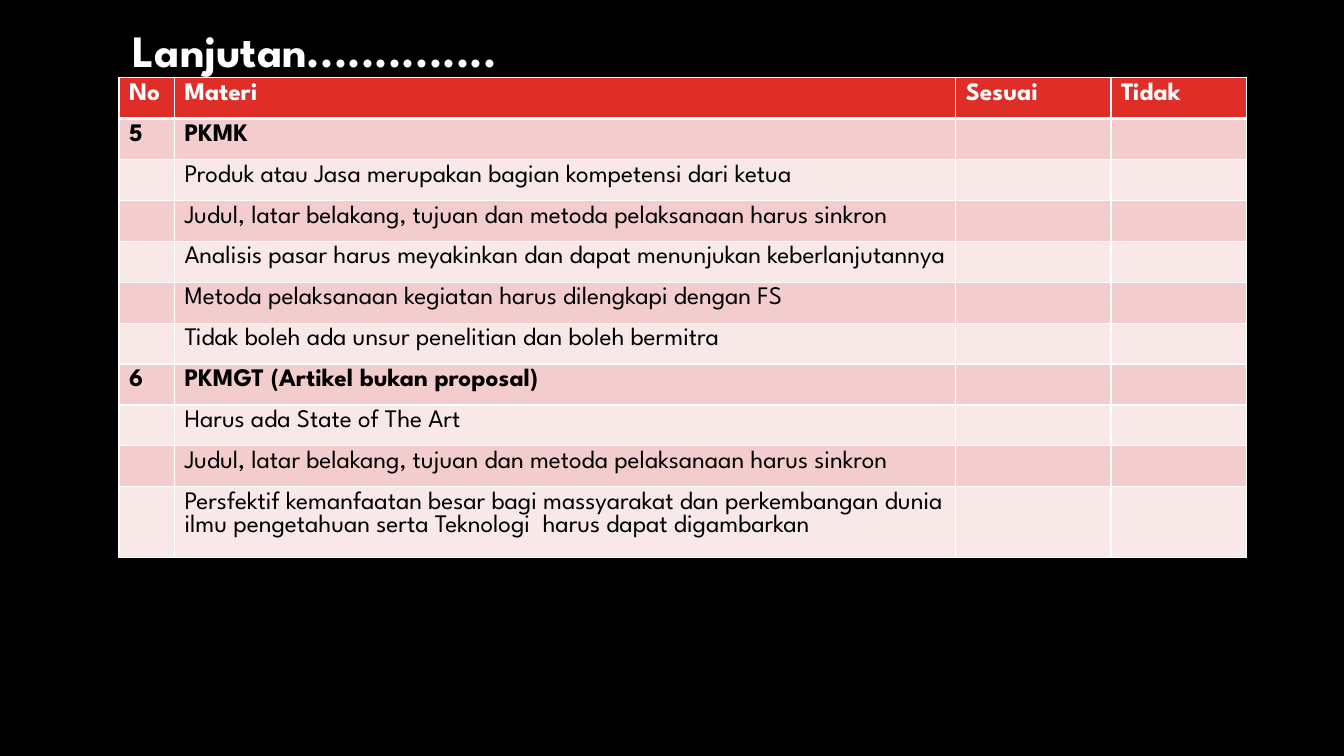
from pptx import Presentation
from pptx.dml.color import RGBColor as RGB
from pptx.enum.text import MSO_AUTO_SIZE as Fit
from pptx.oxml import parse_xml
from pptx.oxml.ns import nsdecls
from pptx.util import Inches, Pt

# Content
TITLE = "Lanjutan.............."
HEAD = ("No", "Materi", "Sesuai", "Tidak")
TOPICS = [
    ("5", "PKMK", [
        "Produk atau Jasa merupakan bagian kompetensi dari ketua",
        "Judul, latar belakang, tujuan dan metoda pelaksanaan harus sinkron",
        "Analisis pasar harus meyakinkan dan dapat menunjukan keberlanjutannya",
        "Metoda pelaksanaan kegiatan harus dilengkapi dengan FS",
        "Tidak boleh ada unsur penelitian dan boleh bermitra",
    ]),
    ("6", "PKMGT (Artikel bukan proposal)", [
        "Harus ada State of The Art",
        "Judul, latar belakang, tujuan dan metoda pelaksanaan harus sinkron",
        "Persfektif kemanfaatan besar bagi massyarakat dan perkembangan dunia "
        "ilmu pengetahuan serta Teknologi  harus dapat digambarkan",
    ]),
]

# Look
FONT = "League Spartan"
COLOR = {"back": "000000", "text": "000000", "light": "FFFFFF",
         "head": "DF2E28", "odd": "F3CDCD", "even": "F9E8E8"}
COLS = (0.55, 7.75, 1.54, 1.34)
LEFT, TOP = 1.18, 0.77
ROW = 4.06 / 10
LAST = 0.7


def write(frame, text, size=18, color="text", bold=False):
    para = frame.paragraphs[0]
    para.text = text
    font = para.font
    if para.runs:
        font = para.runs[0].font
    font.name, font.size, font.bold = FONT, Pt(size), bold
    font.color.rgb = RGB.from_string(COLOR[color])


def edge(cell, widths):
    props = cell._tc.get_or_add_tcPr()
    for spot, (side, width) in enumerate(widths.items()):
        props.insert(spot, parse_xml(
            f'<a:ln{side} {nsdecls("a")} w="{Pt(width)}"><a:solidFill>'
            f'<a:srgbClr val="{COLOR["light"]}"/></a:solidFill></a:ln{side}>'))


def main():
    deck = Presentation()
    deck.slide_width, deck.slide_height = Inches(13.33), Inches(7.5)
    slide = deck.slides.add_slide(deck.slide_layouts[6])
    back = slide.background.fill
    back.solid()
    back.fore_color.rgb = RGB.from_string(COLOR["back"])

    # Title
    box = slide.shapes.add_textbox(
        Inches(1.22), Inches(0.18), Inches(3.82), Inches(0.64))
    box.text_frame.word_wrap = False
    box.text_frame.auto_size = Fit.SHAPE_TO_FIT_TEXT
    write(box.text_frame, TITLE, size=32, color="light", bold=True)

    # Rows: each is a bold flag and its cell texts
    rows = [(True, HEAD)]
    for num, name, points in TOPICS:
        rows.append((True, (num, name, "", "")))
        rows += [(False, ("", point, "", "")) for point in points]
    highs = [ROW] * (len(rows) - 1) + [LAST]

    # Table
    table = slide.shapes.add_table(
        len(rows), len(COLS), Inches(LEFT), Inches(TOP),
        Inches(sum(COLS)), Inches(sum(highs))).table
    for col, width in zip(table.columns, COLS):
        col.width = Inches(width)
    for r, (bold, texts) in enumerate(rows):
        table.rows[r].height = Inches(highs[r])
        tone = "head" if r == 0 else "odd" if r % 2 else "even"
        for c, text in enumerate(texts):
            cell = table.cell(r, c)
            cell.fill.solid()
            cell.fill.fore_color.rgb = RGB.from_string(COLOR[tone])
            edge(cell, {"L": 1, "R": 1, "T": 3 if r == 1 else 1,
                        "B": 3 if r == 0 else 1})
            write(cell.text_frame, text, bold=bold,
                  color="light" if r == 0 else "text")

    deck.save("out.pptx")


if __name__ == "__main__":
    main()
